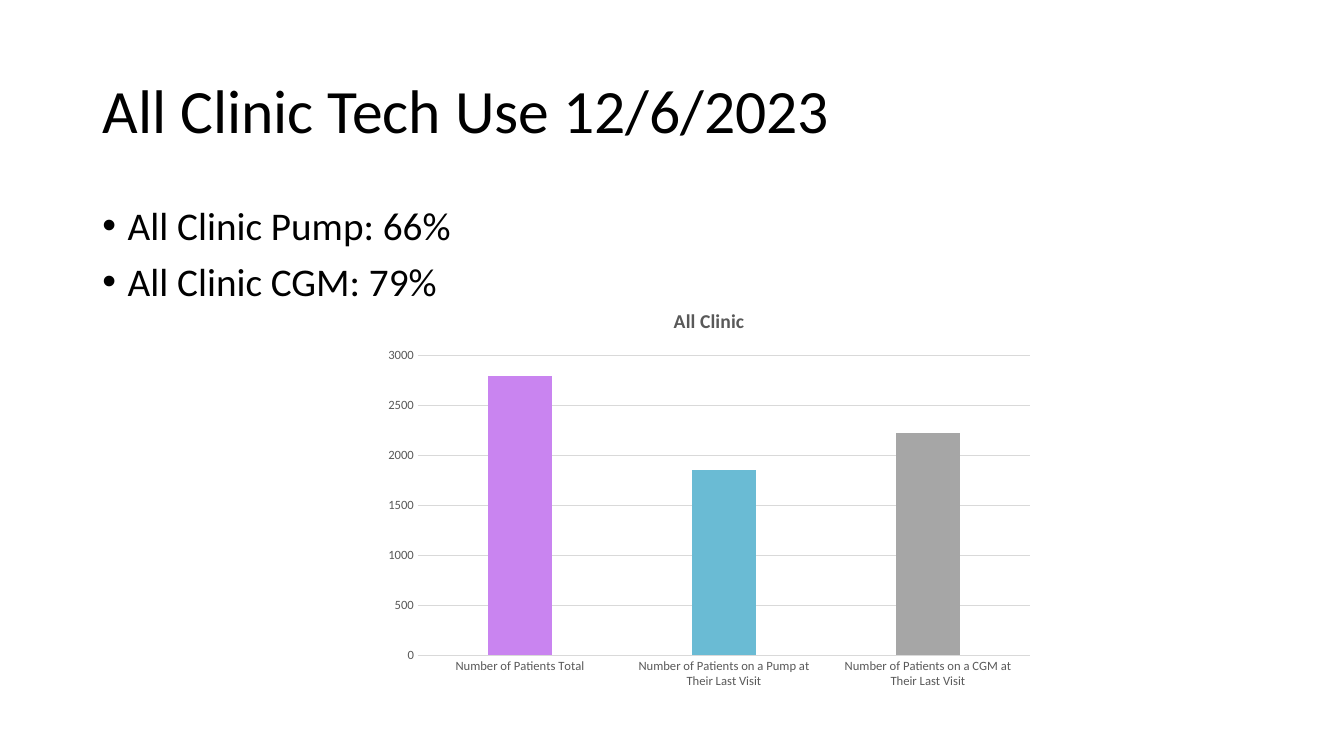
import pptx
import pptx.chart.data
import pptx.dml.color
import pptx.enum.chart
import pptx.enum.text
import pptx.oxml
import pptx.oxml.ns
import pptx.util
from pptx.util import Cm

FONT = "Calibri"
BLACK, GREY, PALE = "000000", "595959", "D9D9D9"
BULLETS = ["All Clinic Pump: 66%", "All Clinic CGM: 79%"]
PATIENTS = {
    "Number of Patients Total": (2790, "C984F0"),
    "Number of Patients on a Pump at Their Last Visit": (1850, "6ABBD4"),
    "Number of Patients on a CGM at Their Last Visit": (2220, "A6A6A6"),
}


def colour(hex_string):
    """Return the colour for a hex string."""
    return pptx.dml.color.RGBColor.from_string(hex_string)


def style_font(font, size, hex_string, bold=False):
    """Set family, size, colour and weight of a font."""
    font.name = FONT
    font.size = pptx.util.Pt(size)
    font.color.rgb = colour(hex_string)
    font.bold = bold


def style_line(line, hex_string):
    """Give a line a thin solid stroke."""
    line.color.rgb = colour(hex_string)
    line.width = pptx.util.Pt(0.75)


def add_run(para, text, size, hex_string, bold=False):
    """Append one formatted run to a paragraph."""
    span = para.add_run()
    span.text = text
    style_font(span.font, size, hex_string, bold)


def set_title(page, text):
    """Place and fill the title placeholder."""
    title = page.shapes.title
    title.left, title.top, title.width, title.height = Cm(2.33), Cm(1.01), Cm(29.21), Cm(3.68)
    frame = title.text_frame
    frame.auto_size = pptx.enum.text.MSO_AUTO_SIZE.NONE
    frame.vertical_anchor = pptx.enum.text.MSO_ANCHOR.MIDDLE
    para = frame.paragraphs[0]
    para.alignment = pptx.enum.text.PP_ALIGN.LEFT
    para.line_spacing = 0.9
    add_run(para, text, 44, BLACK)


def add_bullet(para):
    """Give a paragraph a hanging round bullet."""
    properties = para._p.get_or_add_pPr()
    properties.set("marL", str(Cm(0.64)))
    properties.set("indent", str(-Cm(0.64)))
    namespace = pptx.oxml.ns.nsdecls("a")
    properties.append(pptx.oxml.parse_xml(f'<a:buFont {namespace} typeface="Arial"/>'))
    properties.append(pptx.oxml.parse_xml(f'<a:buChar {namespace} char="•"/>'))


def add_bullet_list(page, lines):
    """Add a text box with one bullet per line."""
    box = page.shapes.add_textbox(Cm(2.33), Cm(5.07), Cm(29.21), Cm(12.09))
    frame = box.text_frame
    frame.word_wrap = True
    for index, line in enumerate(lines):
        para = frame.add_paragraph() if index else frame.paragraphs[0]
        para.line_spacing = 0.9
        para.space_before = pptx.util.Pt(10)
        add_bullet(para)
        add_run(para, line, 28, BLACK)


def style_axes(chart):
    """Format both axes and the gridlines."""
    for axis in (chart.category_axis, chart.value_axis):
        axis.major_tick_mark = pptx.enum.chart.XL_TICK_MARK.NONE
        axis.minor_tick_mark = pptx.enum.chart.XL_TICK_MARK.NONE
        style_font(axis.tick_labels.font, 9, GREY)
    style_line(chart.category_axis.format.line, PALE)
    values = chart.value_axis
    values.minimum_scale, values.maximum_scale, values.major_unit = 0, 3000, 500
    values.format.line.fill.background()
    values.has_major_gridlines = True
    style_line(values.major_gridlines.format.line, PALE)


def add_patient_chart(page):
    """Add the column chart of patient numbers."""
    data = pptx.chart.data.CategoryChartData()
    data.categories = list(PATIENTS)
    data.add_series("Series 1", [value for value, _ in PATIENTS.values()])
    chart = page.shapes.add_chart(
        pptx.enum.chart.XL_CHART_TYPE.COLUMN_CLUSTERED,
        Cm(9.45), Cm(7.32), Cm(16.84), Cm(10.24), data).chart
    style_font(chart.font, 10, BLACK)
    chart.has_legend = False
    chart.has_title = True
    add_run(chart.chart_title.text_frame.paragraphs[0], "All Clinic", 14, GREY, True)
    chart.chart_title.include_in_layout = False
    plot = chart.plots[0]
    plot.vary_by_categories = False
    plot.gap_width, plot.overlap = 219, -27
    series = plot.series[0]
    series.format.fill.solid()
    series.format.fill.fore_color.rgb = colour("4472C4")
    for index, (_, bar_colour) in enumerate(PATIENTS.values()):
        fill = series.points[index].format.fill
        fill.solid()
        fill.fore_color.rgb = colour(bar_colour)
    style_axes(chart)


def main():
    """Build and save the slide."""
    deck = pptx.Presentation()
    deck.slide_width, deck.slide_height = Cm(33.87), Cm(19.05)
    page = deck.slides.add_slide(deck.slide_layouts.get_by_name("Title Only"))
    set_title(page, "All Clinic Tech Use 12/6/2023")
    add_bullet_list(page, BULLETS)
    add_patient_chart(page)
    deck.save("out.pptx")


if __name__ == "__main__":
    main()
